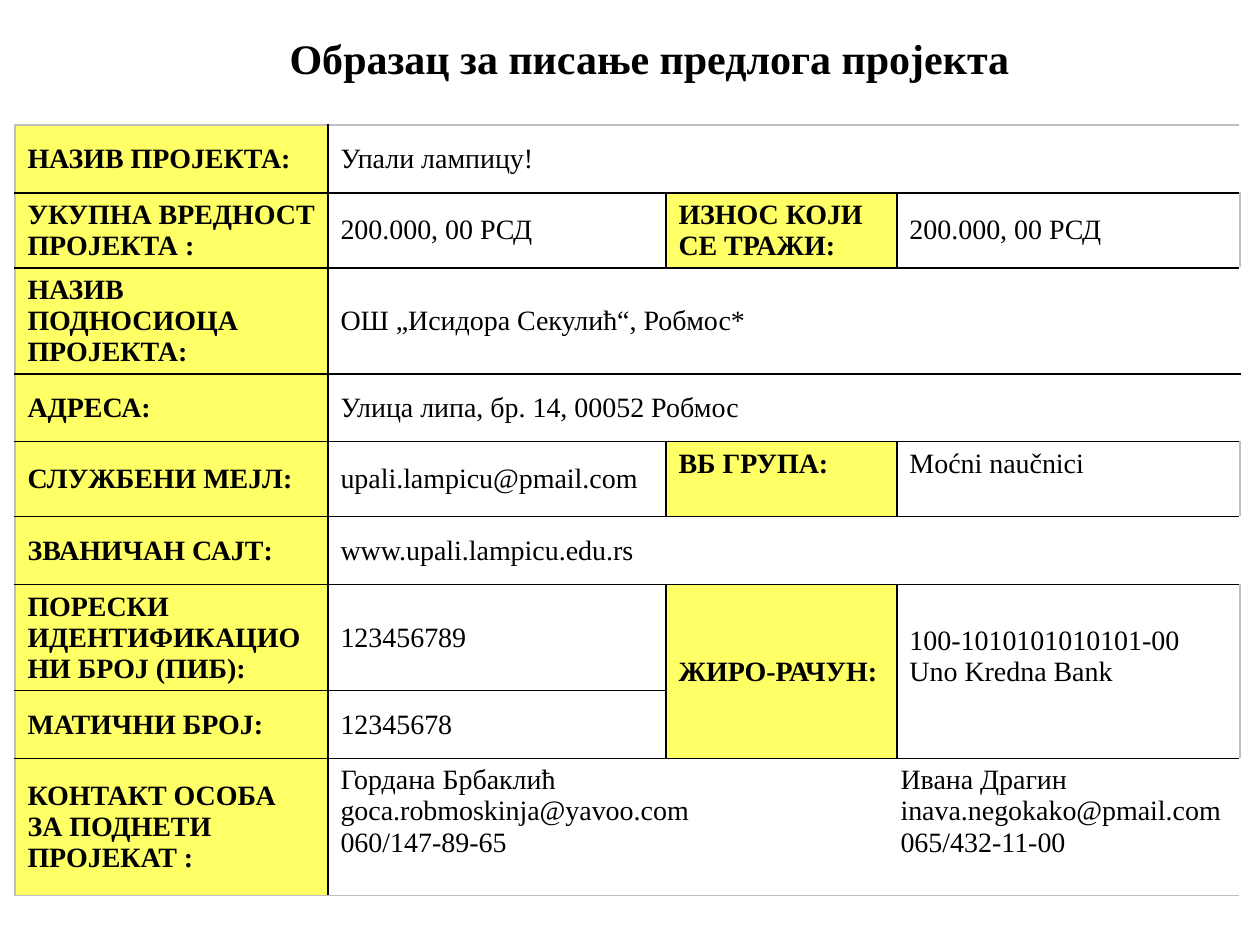
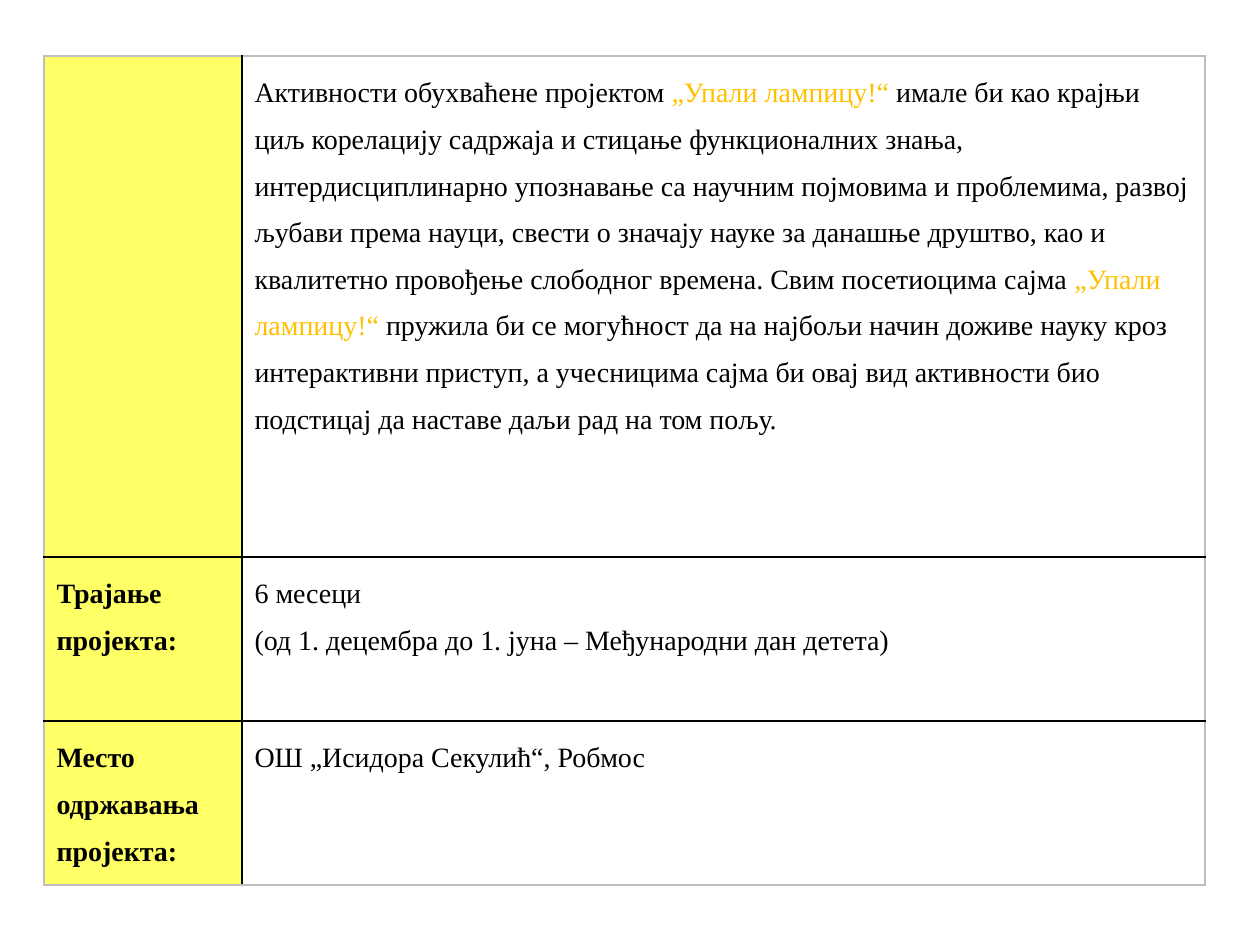
from dataclasses import dataclass

import pptx
import pptx.dml.color
import pptx.enum.text
import pptx.oxml
import pptx.oxml.ns
import pptx.util

EMU_PER_PX = 914400 / 126
ANCHOR = pptx.enum.text.MSO_ANCHOR
NSDECL = pptx.oxml.ns.nsdecls("a")


@dataclass(frozen=True)
class Theme:
    font: str = "Times New Roman"
    title_pt: int = 24
    body_pt: int = 16
    border_pt: int = 1
    text: str = "000000"
    accent: str = "FFC000"
    label_fill: str = "FFFF66"
    value_fill: str = "FFFFFF"
    grid: str = "000000"
    frame: str = "BFBFBF"


@dataclass(frozen=True)
class Cell:
    row: int
    col: int
    text: str
    label: bool = False
    rows: int = 1
    cols: int = 1
    anchor: ANCHOR = ANCHOR.MIDDLE
    accent: str = ""
    extra_bottom: int = 0
    tab: int = 0


@dataclass(frozen=True)
class Form:
    left: int
    top: int
    widths: tuple[int, ...]
    heights: tuple[int, ...]
    cells: tuple[Cell, ...]
    line_spacing: float = 1.0


THEME = Theme()


def px(n: int) -> pptx.util.Emu:
    return pptx.util.Emu(round(n * EMU_PER_PX))


def rgb(value: str) -> pptx.dml.color.RGBColor:
    return pptx.dml.color.RGBColor.from_string(value)


def style_run(r, size: int, bold: bool, color: str = THEME.text) -> None:
    r.font.name = THEME.font
    r.font.size = pptx.util.Pt(size)
    r.font.bold = bold
    r.font.color.rgb = rgb(color)


def add_accented_runs(p, text: str, accent: str) -> None:
    """Fill a paragraph, giving each occurrence of a phrase the accent colour."""
    for i, part in enumerate(text.split(accent)):
        if i:
            r = p.add_run()
            r.text = accent
            style_run(r, THEME.body_pt, False, THEME.accent)
        r = p.add_run()
        r.text = part
        style_run(r, THEME.body_pt, False)


def set_tab(p, position: int) -> None:
    p._p.get_or_add_pPr().append(pptx.oxml.parse_xml(
        f'<a:tabLst {NSDECL}><a:tab pos="{px(position)}" algn="l"/></a:tabLst>'))


def set_borders(cell, edges: dict[str, bool]) -> None:
    """Draw the given sides; a true value marks the outer frame."""
    tc_pr = cell._tc.get_or_add_tcPr()
    for side, outer in edges.items():
        color = THEME.frame if outer else THEME.grid
        tc_pr.append(pptx.oxml.parse_xml(
            f'<a:ln{side} {NSDECL} w="{pptx.util.Pt(THEME.border_pt)}">'
            f'<a:solidFill><a:srgbClr val="{color}"/></a:solidFill></a:ln{side}>'))


def fill_cell(table, form: Form, c: Cell) -> None:
    last_row, last_col = c.row + c.rows - 1, c.col + c.cols - 1
    cell = table.cell(c.row, c.col)
    if c.rows * c.cols > 1:
        cell.merge(table.cell(last_row, last_col))
    for row in range(c.row, last_row + 1):
        for col in range(c.col, last_col + 1):
            part = table.cell(row, col)
            edges = {}
            if col == c.col:
                edges["L"] = col == 0
            if col == last_col:
                edges["R"] = col == len(form.widths) - 1
            if row == c.row:
                edges["T"] = row == 0
            if row == last_row:
                edges["B"] = row == len(form.heights) - 1
            set_borders(part, edges)
            part.fill.solid()
            part.fill.fore_color.rgb = rgb(THEME.label_fill if c.label else THEME.value_fill)
    cell.vertical_anchor = c.anchor
    cell.margin_bottom += px(c.extra_bottom)
    tf = cell.text_frame
    if c.accent:
        add_accented_runs(tf.paragraphs[0], c.text, c.accent)
    else:
        tf.text = c.text
    for p in tf.paragraphs:
        p.line_spacing = form.line_spacing
        if c.tab:
            set_tab(p, c.tab)
        if not c.accent:
            for r in p.runs:
                style_run(r, THEME.body_pt, c.label)


def add_form(s, form: Form) -> None:
    table = s.shapes.add_table(
        len(form.heights), len(form.widths), px(form.left), px(form.top),
        px(sum(form.widths)), px(sum(form.heights))).table
    table.first_row = table.horz_banding = False
    for column, width in zip(table.columns, form.widths):
        column.width = px(width)
    for row, height in zip(table.rows, form.heights):
        row.height = px(height)
    for c in form.cells:
        fill_cell(table, form, c)


def add_title(s, text: str) -> None:
    tf = s.shapes.add_textbox(px(233), px(26), px(833), px(63)).text_frame
    tf.word_wrap = True
    tf.text = text
    p = tf.paragraphs[0]
    p.alignment = pptx.enum.text.PP_ALIGN.CENTER
    style_run(p.runs[0], THEME.title_pt, True)


APPLICATION = Form(
    left=15, top=125, widths=(313, 338, 231, 343),
    heights=(68, 74, 106, 68, 75, 68, 105, 68, 137),
    cells=(
        Cell(0, 0, "НАЗИВ ПРОЈЕКТА:", label=True),
        Cell(0, 1, "Упали лампицу!", cols=3),
        Cell(1, 0, "УКУПНА ВРЕДНОСТ ПРОЈЕКТА :", label=True),
        Cell(1, 1, "200.000, 00 РСД"),
        Cell(1, 2, "ИЗНОС КОЈИ СЕ ТРАЖИ:", label=True),
        Cell(1, 3, "200.000, 00 РСД"),
        Cell(2, 0, "НАЗИВ ПОДНОСИОЦА ПРОЈЕКТА:", label=True),
        Cell(2, 1, "ОШ „Исидора Секулић“, Робмос*", cols=3),
        Cell(3, 0, "АДРЕСА:", label=True),
        Cell(3, 1, "Улица липа, бр. 14, 00052 Робмос", cols=3),
        Cell(4, 0, "СЛУЖБЕНИ МЕЈЛ:", label=True),
        Cell(4, 1, "upali.lampicu@pmail.com"),
        Cell(4, 2, "ВБ ГРУПА:", label=True, anchor=ANCHOR.TOP),
        Cell(4, 3, "Moćni naučnici", anchor=ANCHOR.TOP),
        Cell(5, 0, "ЗВАНИЧАН САЈТ:", label=True),
        Cell(5, 1, "www.upali.lampicu.edu.rs", cols=3),
        Cell(6, 0, "ПОРЕСКИ ИДЕНТИФИКАЦИОНИ БРОЈ (ПИБ):", label=True),
        Cell(6, 1, "123456789"),
        Cell(6, 2, "ЖИРО-РАЧУН:", label=True, rows=2),
        Cell(6, 3, "100-1010101010101-00\nUno Kredna Bank", rows=2, extra_bottom=31),
        Cell(7, 0, "МАТИЧНИ БРОЈ:", label=True),
        Cell(7, 1, "12345678"),
        Cell(8, 0, "КОНТАКТ ОСОБА ЗА ПОДНЕТИ ПРОЈЕКАТ :", label=True),
        Cell(8, 1, "Гордана Брбаклић\tИвана Драгин\n"
                   "goca.robmoskinja@yavoo.com\tinava.negokаko@pmail.com\n"
                   "060/147-89-65\t065/432-11-00",
             cols=3, anchor=ANCHOR.TOP, tab=560),
    ))

DETAILS = Form(
    left=44, top=56, widths=(198, 963), heights=(501, 164, 164), line_spacing=1.5,
    cells=(
        Cell(0, 0, "", label=True),
        Cell(0, 1, "Активности обухваћене пројектом „Упали лампицу!“ имале би као крајњи "
                   "циљ корелацију садржаја и стицање функционалних знања, "
                   "интердисциплинарно упознавање са научним појмовима и проблемима, развој "
                   "љубави према науци, свести о значају науке за данашње друштво, као и "
                   "квалитетно провођење слободног времена. Свим посетиоцима сајма „Упали "
                   "лампицу!“ пружила би се могућност да на најбољи начин доживе науку кроз "
                   "интерактивни приступ, а учесницима сајма би овај вид активности био "
                   "подстицај да наставе даљи рад на том пољу.",
             anchor=ANCHOR.TOP, accent="„Упали лампицу!“ "),
        Cell(1, 0, "Трајање пројекта:", label=True, anchor=ANCHOR.TOP),
        Cell(1, 1, "6 месеци\n(од 1. децембра до 1. јуна – Међународни дан детета)",
             anchor=ANCHOR.TOP),
        Cell(2, 0, "Место одржавања пројекта:", label=True, anchor=ANCHOR.TOP),
        Cell(2, 1, "ОШ „Исидора Секулић“, Робмос", anchor=ANCHOR.TOP),
    ))


def main() -> None:
    prs = pptx.Presentation()
    prs.slide_width, prs.slide_height = px(1260), px(945)
    blank = prs.slide_layouts[6]
    s = prs.slides.add_slide(blank)
    add_form(s, APPLICATION)
    add_title(s, "Образац за писање предлога пројекта")
    add_form(prs.slides.add_slide(blank), DETAILS)
    prs.save("out.pptx")


if __name__ == "__main__":
    main()
